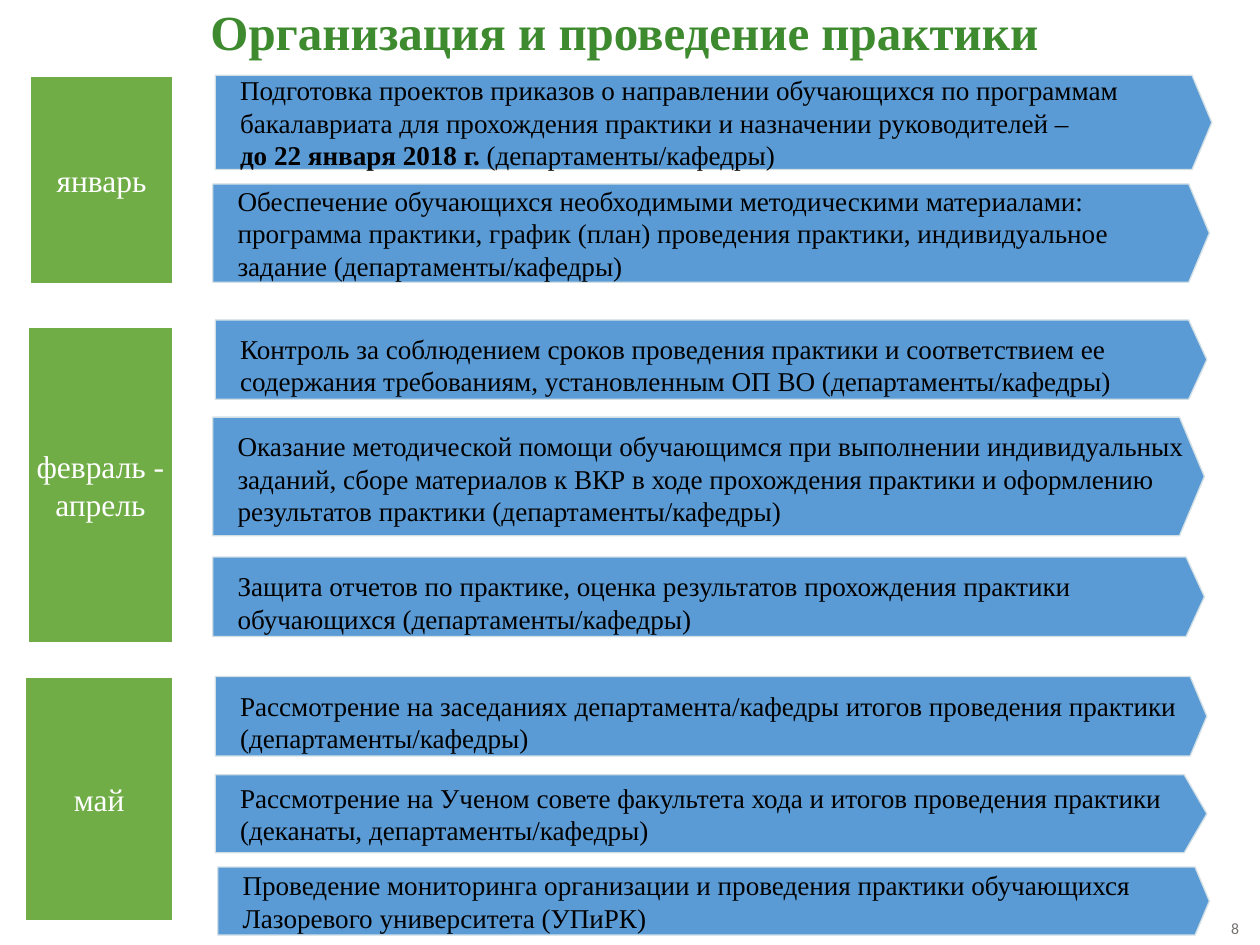
"""Build the slide on organising and running student internships."""
from dataclasses import dataclass

from pptx import Presentation
from pptx.dml.color import RGBColor
from pptx.enum.shapes import MSO_SHAPE
from pptx.enum.text import MSO_ANCHOR, MSO_AUTO_SIZE, PP_ALIGN
from pptx.util import Cm, Pt

COLORS = {
    "title": "3E8A2F",
    "month": "70AD47",
    "task": "5B9BD5",
    "task_edge": "D2E0E6",
    "light": "FFFFFF",
    "dark": "000000",
    "number": "767171",
}
SERIF = "Times New Roman"
TASK_INDENT = Cm(0.5)
INSET = Cm(0.25)


@dataclass
class Month:
    name: str
    left: float
    top: float
    width: float
    height: float


@dataclass
class Task:
    lines: list
    left: float
    top: float
    width: float
    height: float
    point: float
    anchor: MSO_ANCHOR = MSO_ANCHOR.MIDDLE


MONTHS = [
    Month("январь", 0.6, 1.52, 2.9, 4.22),
    Month("февраль - апрель", 0.55, 6.58, 2.95, 6.4),
    Month("май", 0.5, 13.64, 3, 4.93),
]

TASKS = [
    Task([[("Подготовка проектов приказов о направлении обучающихся по программам "
            "бакалавриата для прохождения практики и назначении руководителей –", False)],
          [("до 22 января 2018 г. ", True), ("(департаменты/кафедры)", False)]],
         4.34, 1.52, 20.09, 1.9, 0.21),
    Task([[("Обеспечение обучающихся необходимыми методическими материалами: программа "
            "практики, график (план) проведения практики, индивидуальное задание "
            "(департаменты/кафедры)", False)]],
         4.29, 3.71, 20.09, 1.98, 0.21),
    Task([[("Контроль за соблюдением сроков проведения практики и соответствием ее "
            "содержания требованиям, установленным ОП ВО (департаменты/кафедры)", False)]],
         4.34, 6.45, 19.99, 1.6, 0.23, MSO_ANCHOR.TOP),
    Task([[("Оказание методической помощи обучающимся при выполнении индивидуальных "
            "заданий, сборе материалов к ВКР в ходе прохождения практики и оформлению "
            "результатов практики (департаменты/кафедры)", False)]],
         4.29, 8.41, 19.99, 2.39, 0.21, MSO_ANCHOR.TOP),
    Task([[("Защита отчетов по практике, оценка результатов прохождения практики "
            "обучающихся (департаменты/кафедры)", False)]],
         4.29, 11.23, 19.99, 1.6, 0.23, MSO_ANCHOR.TOP),
    Task([[("Рассмотрение на заседаниях департамента/кафедры итогов проведения практики "
            "(департаменты/кафедры)", False)]],
         4.34, 13.64, 19.99, 1.6, 0.21, MSO_ANCHOR.TOP),
    Task([[("Рассмотрение на Ученом совете факультета хода и итогов проведения практики "
            "(деканаты, департаменты/кафедры)", False)]],
         4.34, 15.62, 19.99, 1.57, 0.29),
    Task([[("Проведение мониторинга организации и проведения практики обучающихся "
            "Лазоревого университета (УПиРК)", False)]],
         4.39, 17.48, 19.99, 1.37, 0.21),
]


def color(key: str) -> RGBColor:
    """Return the named colour."""
    return RGBColor.from_string(COLORS[key])


def write(frame, lines: list, *, size: float, ink: str, font: str = SERIF,
          align=PP_ALIGN.LEFT, anchor=MSO_ANCHOR.MIDDLE, spacing: float = 1.0) -> None:
    """Write lines of (text, bold) pieces as one paragraph."""
    frame.word_wrap = True
    frame.auto_size = MSO_AUTO_SIZE.NONE
    frame.vertical_anchor = anchor
    paragraph = frame.paragraphs[0]
    paragraph.alignment = align
    paragraph.line_spacing = spacing
    for index, pieces in enumerate(lines):
        if index:
            paragraph.add_line_break()
        for text, bold in pieces:
            run = paragraph.add_run()
            run.text = text
            run.font.name = font
            run.font.size = Pt(size)
            run.font.bold = bold
            run.font.color.rgb = color(ink)


def add_block(slide, kind: MSO_SHAPE, place, fill: str, edge: str, edge_width: float,
              indent: int = 0):
    """Add a filled shape at the place of a month or task."""
    block = slide.shapes.add_shape(
        kind, Cm(place.left), Cm(place.top), Cm(place.width), Cm(place.height))
    block.shadow.inherit = False
    block.fill.solid()
    block.fill.fore_color.rgb = color(fill)
    block.line.color.rgb = color(edge)
    block.line.width = Pt(edge_width)
    frame = block.text_frame
    frame.margin_left, frame.margin_right = indent, 0
    frame.margin_top = frame.margin_bottom = INSET
    return block


def add_month(slide, month: Month) -> None:
    """Add a month label."""
    label = add_block(slide, MSO_SHAPE.RECTANGLE, month, "month", "light", 1.5)
    write(label.text_frame, [[(month.name, False)]], size=18, ink="light",
          align=PP_ALIGN.CENTER)


def add_task(slide, task: Task) -> None:
    """Add a task arrow."""
    arrow = add_block(slide, MSO_SHAPE.PENTAGON, task, "task", "task_edge", 0.75, TASK_INDENT)
    arrow.adjustments[0] = task.point
    write(arrow.text_frame, task.lines, size=15.5, ink="dark", anchor=task.anchor)


def main() -> None:
    """Build and save the slide."""
    deck = Presentation()
    deck.slide_width, deck.slide_height = Cm(25.4), Cm(19.05)
    slide = deck.slides.add_slide(deck.slide_layouts[5])

    title = slide.shapes.title
    title.left, title.top, title.width, title.height = Cm(0.28), Cm(0.1), Cm(24.61), Cm(1.19)
    write(title.text_frame, [[("Организация и проведение практики", True)]],
          size=28, ink="title", align=PP_ALIGN.CENTER, spacing=0.9)

    for month in MONTHS:
        add_month(slide, month)
    for task in TASKS:
        add_task(slide, task)

    page_number = slide.shapes.add_textbox(Cm(23.55), Cm(18.21), Cm(1.68), Cm(1.02))
    write(page_number.text_frame, [[("8", False)]], size=9, ink="number",
          font="Calibri", align=PP_ALIGN.RIGHT)

    deck.save("out.pptx")


if __name__ == "__main__":
    main()
